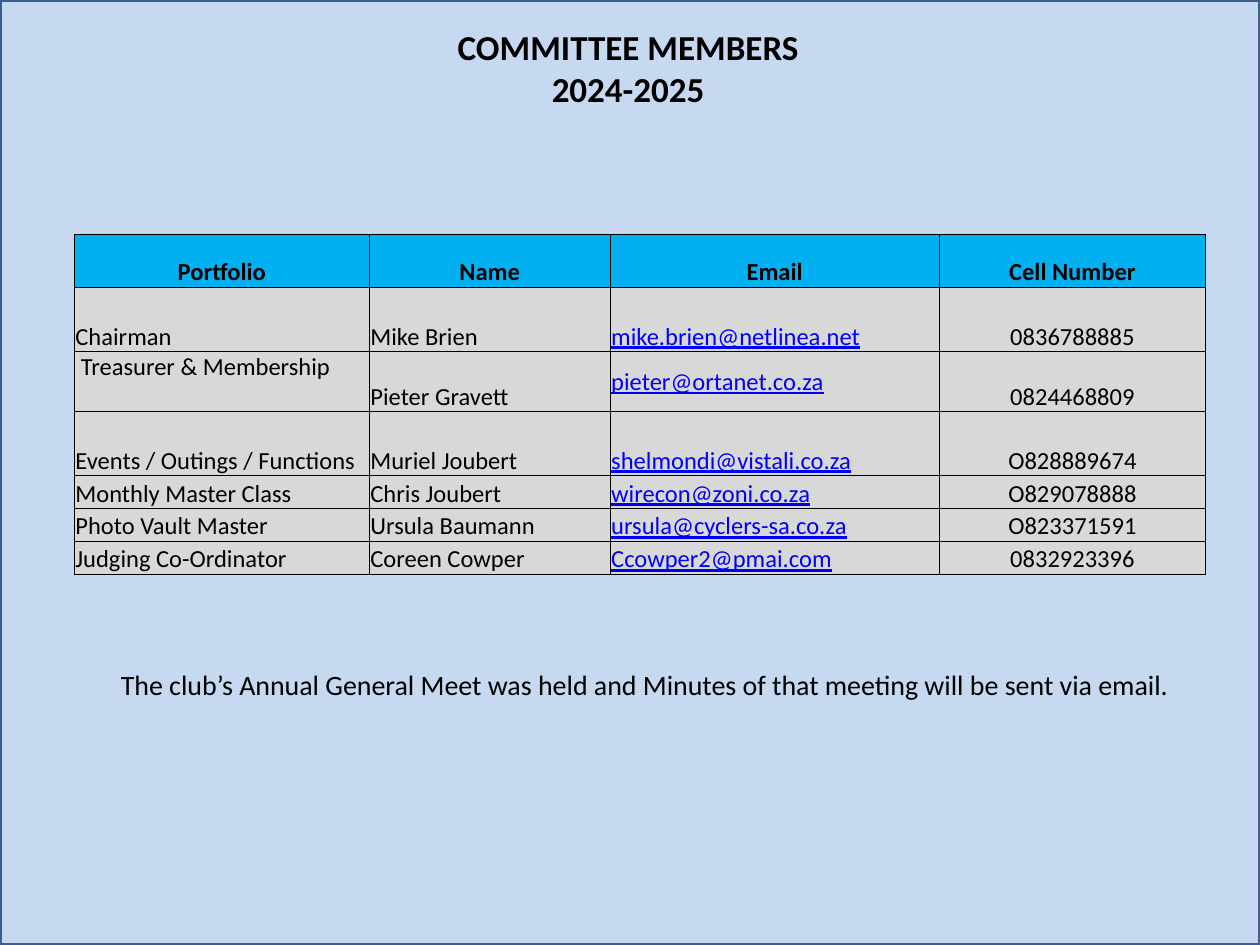
from lxml import etree
from pptx import Presentation
from pptx.dml.color import RGBColor
from pptx.enum.shapes import MSO_SHAPE
from pptx.enum.text import MSO_ANCHOR, MSO_AUTO_SIZE, PP_ALIGN
from pptx.oxml.ns import qn
from pptx.util import Pt

RECTANGLE = MSO_SHAPE.RECTANGLE
TOP, MIDDLE, BOTTOM = MSO_ANCHOR.TOP, MSO_ANCHOR.MIDDLE, MSO_ANCHOR.BOTTOM
FIT_TEXT = MSO_AUTO_SIZE.SHAPE_TO_FIT_TEXT
LEFT, CENTER = PP_ALIGN.LEFT, PP_ALIGN.CENTER

BLACK = RGBColor(0x00, 0x00, 0x00)
LINK_BLUE = RGBColor(0x00, 0x00, 0xFF)
PALE_BLUE = RGBColor(0xC6, 0xD9, 0xF1)
FRAME_BLUE = RGBColor(0x3A, 0x5F, 0x8C)
HEADER_BLUE = RGBColor(0x00, 0xB0, 0xF0)
ROW_GREY = RGBColor(0xD8, 0xD8, 0xD8)

PAGE_WIDTH, PAGE_HEIGHT = 720, 540
EMAIL_COLUMN = 2
COLUMN_ALIGNS = [LEFT, LEFT, LEFT, CENTER]
COLUMN_WIDTHS = [168.6, 137.6, 188, 152.4]
ROW_HEIGHTS = [30.3, 36.6, 34.3, 36.6, 18.85, 18.85, 18.85]
SPECIAL_ANCHORS = {(2, 0): TOP, (2, EMAIL_COLUMN): MIDDLE}
MEMBERS = [
    ["Portfolio", "Name", "Email", "Cell Number"],
    ["Chairman", "Mike Brien", "mike.brien@netlinea.net", "0836788885"],
    [" Treasurer & Membership", "Pieter Gravett", "pieter@ortanet.co.za", "0824468809"],
    ["Events / Outings / Functions", "Muriel Joubert", "shelmondi@vistali.co.za", "O828889674"],
    ["Monthly Master Class", "Chris Joubert", "wirecon@zoni.co.za", "O829078888"],
    ["Photo Vault Master", "Ursula Baumann", "ursula@cyclers-sa.co.za", "O823371591"],
    ["Judging Co-Ordinator", "Coreen Cowper", "Ccowper2@pmai.com", "0832923396"],
]


class SlideBuilder:
    """Holds the text style and the current slide, and adds elements to it."""

    font_name = "Calibri"
    border_width = 0.5

    def __init__(self, page):
        self.page = page

    def style(self, para, size, align, bold=False, link=False):
        para.alignment = align
        font = para.font
        font.name = self.font_name
        font.size = Pt(size)
        font.bold = bold
        font.underline = link
        font.color.rgb = LINK_BLUE if link else BLACK

    def backdrop(self):
        box = self.page.shapes.add_shape(RECTANGLE, 0, 0, Pt(PAGE_WIDTH), Pt(PAGE_HEIGHT))
        box.shadow.inherit = False
        box.fill.solid()
        box.fill.fore_color.rgb = PALE_BLUE
        box.line.color.rgb = FRAME_BLUE
        box.line.width = Pt(2)

    def text(self, left, top, width, height, lines, size, bold=False):
        box = self.page.shapes.add_textbox(Pt(left), Pt(top), Pt(width), Pt(height))
        frame = box.text_frame
        frame.word_wrap = True
        frame.auto_size = FIT_TEXT
        frame.text = "\n".join(lines)
        for para in frame.paragraphs:
            self.style(para, size, CENTER, bold)

    def border(self, cell):
        properties = cell._tc.get_or_add_tcPr()
        for side in ("lnL", "lnR", "lnT", "lnB"):
            line = etree.SubElement(properties, qn(f"a:{side}"), w=str(Pt(self.border_width)))
            fill = etree.SubElement(line, qn("a:solidFill"))
            etree.SubElement(fill, qn("a:srgbClr"), val=str(BLACK))

    def cell(self, cell, text, fill, anchor, align, bold, link):
        self.border(cell)
        cell.fill.solid()
        cell.fill.fore_color.rgb = fill
        cell.margin_left = cell.margin_right = cell.margin_top = Pt(0.6)
        cell.margin_bottom = 0
        cell.vertical_anchor = anchor
        cell.text = text
        self.style(cell.text_frame.paragraphs[0], 14, align, bold, link)

    def table(self, left, top, rows):
        table = self.page.shapes.add_table(
            len(rows), len(COLUMN_WIDTHS), Pt(left), Pt(top),
            Pt(sum(COLUMN_WIDTHS)), Pt(sum(ROW_HEIGHTS))).table
        for column, width in zip(table.columns, COLUMN_WIDTHS):
            column.width = Pt(width)
        for row, height in zip(table.rows, ROW_HEIGHTS):
            row.height = Pt(height)
        for row_index, row in enumerate(rows):
            header = row_index == 0
            for column_index, text in enumerate(row):
                self.cell(
                    table.cell(row_index, column_index), text,
                    fill=HEADER_BLUE if header else ROW_GREY,
                    anchor=SPECIAL_ANCHORS.get((row_index, column_index), BOTTOM),
                    align=CENTER if header else COLUMN_ALIGNS[column_index],
                    bold=header,
                    link=not header and column_index == EMAIL_COLUMN)


def main():
    deck = Presentation()
    deck.slide_width, deck.slide_height = Pt(PAGE_WIDTH), Pt(PAGE_HEIGHT)
    builder = SlideBuilder(deck.slides.add_slide(deck.slide_layouts[6]))
    builder.backdrop()
    builder.text(179, 11, 360, 55.7, ["COMMITTEE MEMBERS", "2024-2025"], 20, bold=True)
    builder.table(42.5, 134, MEMBERS)
    builder.text(
        42.5, 378, 652, 26.6,
        ["The club’s Annual General Meet was held and Minutes of that meeting will be sent via email."], 16)
    deck.save("out.pptx")


if __name__ == "__main__":
    main()
